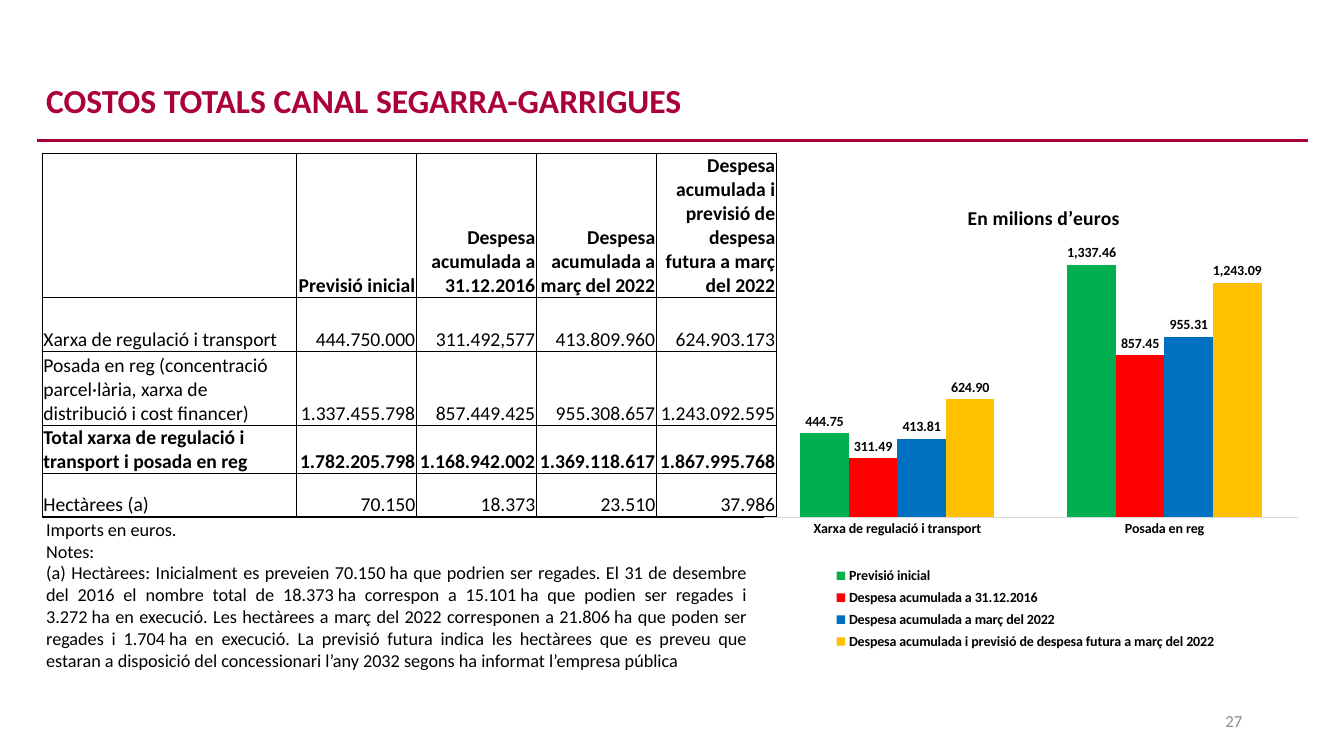
from dataclasses import dataclass

from lxml.etree import SubElement
from pptx import Presentation
from pptx.chart.data import CategoryChartData as Data
from pptx.dml.color import RGBColor as Rgb
from pptx.enum.chart import XL_CHART_TYPE as Kind, XL_LABEL_POSITION as Spot
from pptx.enum.chart import XL_LEGEND_POSITION as Side, XL_TICK_LABEL_POSITION as Tags
from pptx.enum.chart import XL_TICK_MARK as Tick
from pptx.enum.shapes import MSO_CONNECTOR as Link
from pptx.enum.text import MSO_ANCHOR as Anchor, PP_ALIGN as Align
from pptx.oxml import parse_xml
from pptx.oxml.ns import nsdecls, qn
from pptx.util import Inches, Pt


@dataclass(frozen=True)
class Theme:
    """Colours and type sizes of the slide."""
    font: str = "Calibri"
    brand: str = "AB003E"
    ink: str = "000000"
    paper: str = "FFFFFF"
    grey: str = "8C8C8C"
    rule: str = "D9D9D9"
    bars: tuple = ("00B050", "FF0000", "0070C0", "FFC000")
    title: int = 24
    cell: int = 14
    note: int = 13
    page: int = 12
    label: int = 10


THEME = Theme()
HEADS = ["Previsió inicial", "Despesa acumulada a 31.12.2016",
         "Despesa acumulada a març del 2022",
         "Despesa acumulada i previsió de despesa futura a març del 2022"]
ROWS = [
    ["", *HEADS],
    ["Xarxa de regulació i transport",
     "444.750.000", "311.492,577", "413.809.960", "624.903.173"],
    ["Posada en reg (concentració parcel·lària, xarxa de distribució i cost financer)",
     "1.337.455.798", "857.449.425", "955.308.657", "1.243.092.595"],
    ["Total xarxa de regulació i transport i posada en reg",
     "1.782.205.798", "1.168.942.002", "1.369.118.617", "1.867.995.768"],
    ["Hectàrees (a)", "70.150", "18.373", "23.510", "37.986"],
]
TALL = [1.43, 0.54, 0.73, 0.48, 0.43]
WIDE = [2.52] + [1.19] * 4
BOLD = (0, 3)
CATS = ["Xarxa de regulació i transport", "Posada en reg"]
COSTS = [(444.75, 1337.46), (311.49, 857.45), (413.81, 955.31), (624.9, 1243.09)]
MONEY = "#,##0.00"
HA = chr(160) + "ha"
NOTES = [
    "Imports en euros.",
    "Notes:",
    f"(a) Hectàrees: Inicialment es preveien 70.150{HA} que podrien ser regades. "
    f"El 31 de desembre del 2016 el nombre total de 18.373{HA} correspon a 15.101{HA} "
    f"que podien ser regades i 3.272{HA} en execució. Les hectàrees a març del 2022 "
    f"corresponen a 21.806{HA} que poden ser regades i 1.704{HA} en execució. La previsió "
    "futura indica les hectàrees que es preveu que estaran a disposició del "
    "concessionari l’any 2032 segons ha informat l’empresa pública",
]


def style(font, size, color=THEME.ink, bold=False):
    """Set the face, size, colour and weight of a font."""
    font.name, font.size, font.bold = THEME.font, Pt(size), bold
    font.color.rgb = Rgb.from_string(color)


def add_text(slide, box, lines, size, color=THEME.ink, bold=False,
             align=Align.LEFT, anchor=Anchor.MIDDLE, space=None):
    """Add a wrapped text box with one paragraph per line."""
    frame = slide.shapes.add_textbox(*map(Inches, box)).text_frame
    frame.word_wrap, frame.vertical_anchor = True, anchor
    frame.text = "\n".join(lines)
    for para in frame.paragraphs:
        para.alignment, para.line_spacing = align, space
        for run in para.runs:
            style(run.font, size, color, bold)


def add_head(slide, box):
    """Add the title and the rule below it."""
    left, top, wide, tall = box
    add_text(slide, box, ["COSTOS TOTALS CANAL SEGARRA-GARRIGUES"],
             THEME.title, THEME.brand, True, space=0.9)
    base = Inches(top + tall + 0.05)
    rule = slide.shapes.add_connector(
        Link.STRAIGHT, Inches(left + 0.01), base, Inches(left + wide + 0.01), base)
    rule.line.color.rgb = Rgb.from_string(THEME.brand)
    rule.line.width = Pt(2.25)
    SubElement(rule._element.spPr, qn("a:effectLst"))


def edge(cell):
    """Draw a thin line on the four sides of a cell."""
    props = cell._tc.get_or_add_tcPr()
    for side in ("lnL", "lnR", "lnT", "lnB"):
        line = SubElement(props, qn(f"a:{side}"), w=str(Pt(1)))
        fill = SubElement(line, qn("a:solidFill"))
        SubElement(fill, qn("a:srgbClr"), val=THEME.ink)


def add_costs(slide, box):
    """Add the table of costs."""
    table = slide.shapes.add_table(len(ROWS), len(WIDE), *map(Inches, box)).table
    for col, wide in zip(table.columns, WIDE):
        col.width = Inches(wide)
    for i, (row, texts) in enumerate(zip(table.rows, ROWS)):
        row.height = Inches(TALL[i])
        for j, (cell, text) in enumerate(zip(row.cells, texts)):
            edge(cell)
            cell.fill.solid()
            cell.fill.fore_color.rgb = Rgb.from_string(THEME.paper)
            cell.margin_left = cell.margin_right = cell.margin_top = Inches(0.01)
            cell.margin_bottom = 0
            cell.vertical_anchor = Anchor.BOTTOM
            cell.text = text
            para = cell.text_frame.paragraphs[0]
            para.alignment = Align.RIGHT if j else Align.LEFT
            style(para.font, THEME.cell, bold=i in BOLD)
            for run in para.runs:
                style(run.font, THEME.cell, bold=i in BOLD)


def place(node, index, spot, inner=False):
    """Fix a chart part at a spot given in shares of the chart."""
    for old in node.findall(qn("c:layout")):
        node.remove(old)
    layout = parse_xml(f"<c:layout {nsdecls('c')}><c:manualLayout/></c:layout>")
    node.insert(index, layout)
    marks = [("layoutTarget", "inner")] if inner else []
    marks += [("xMode", "edge"), ("yMode", "edge"), *zip("xywh", spot)]
    for name, val in marks:
        SubElement(layout[0], qn(f"c:{name}"), val=str(val))


def add_bars(slide, box):
    """Add the column chart of costs in millions."""
    data = Data(number_format=MONEY)
    data.categories = CATS
    for name, vals in zip(HEADS, COSTS):
        data.add_series(name, vals)
    chart = slide.shapes.add_chart(
        Kind.COLUMN_CLUSTERED, *map(Inches, box), data).chart
    style(chart.font, THEME.label)
    chart.has_title = False
    plot = chart.plots[0]
    plot.gap_width, plot.overlap, plot.vary_by_categories = 150, 0, False
    for series, color in zip(plot.series, THEME.bars):
        series.format.fill.solid()
        series.format.fill.fore_color.rgb = Rgb.from_string(color)
        tags = series.data_labels
        tags.show_value, tags.position = True, Spot.OUTSIDE_END
        tags.number_format, tags.number_format_is_linked = MONEY, False
        style(tags.font, THEME.label, bold=True)
    scale = chart.value_axis
    scale.minimum_scale, scale.maximum_scale = 0, 1600
    scale.has_major_gridlines = scale.visible = False
    axis = chart.category_axis
    axis.major_tick_mark = axis.minor_tick_mark = Tick.NONE
    axis.tick_label_position = Tags.NEXT_TO_AXIS
    axis.format.line.color.rgb = Rgb.from_string(THEME.rule)
    axis.format.line.width = Pt(0.75)
    style(axis.tick_labels.font, THEME.label, bold=True)
    frame = axis.axis_title.text_frame
    frame.text = "En milions d’euros"
    style(frame.paragraphs[0].runs[0].font, THEME.cell, bold=True)
    chart.has_legend = True
    legend = chart.legend
    legend.position, legend.include_in_layout = Side.BOTTOM, False
    style(legend.font, THEME.label, bold=True)
    place(axis.axis_title._element, 1, (0.39, 0.02))
    place(legend._element, 1, (0.14, 0.75, 0.72, 0.19))
    place(chart.element.xpath("//c:plotArea")[0], 0, (0.03, 0.05, 0.96, 0.61), True)


def main():
    """Build the slide and save it."""
    deck = Presentation()
    deck.slide_width, deck.slide_height = Inches(13.33), Inches(7.5)
    slide = deck.slides.add_slide(deck.slide_layouts[6])
    add_head(slide, (0.36, 0.7, 12.6, 0.64))
    add_costs(slide, (0.42, 1.52, sum(WIDE), sum(TALL)))
    add_text(slide, (0.36, 5.09, 7.14, 1.63), NOTES, THEME.note,
             align=Align.JUSTIFY, anchor=Anchor.TOP)
    add_bars(slide, (7.41, 1.89, 5.52, 4.91))
    add_text(slide, (9.42, 6.95, 3, 0.4), ["27"], THEME.page, THEME.grey,
             align=Align.RIGHT)
    deck.save("out.pptx")


if __name__ == "__main__":
    main()
